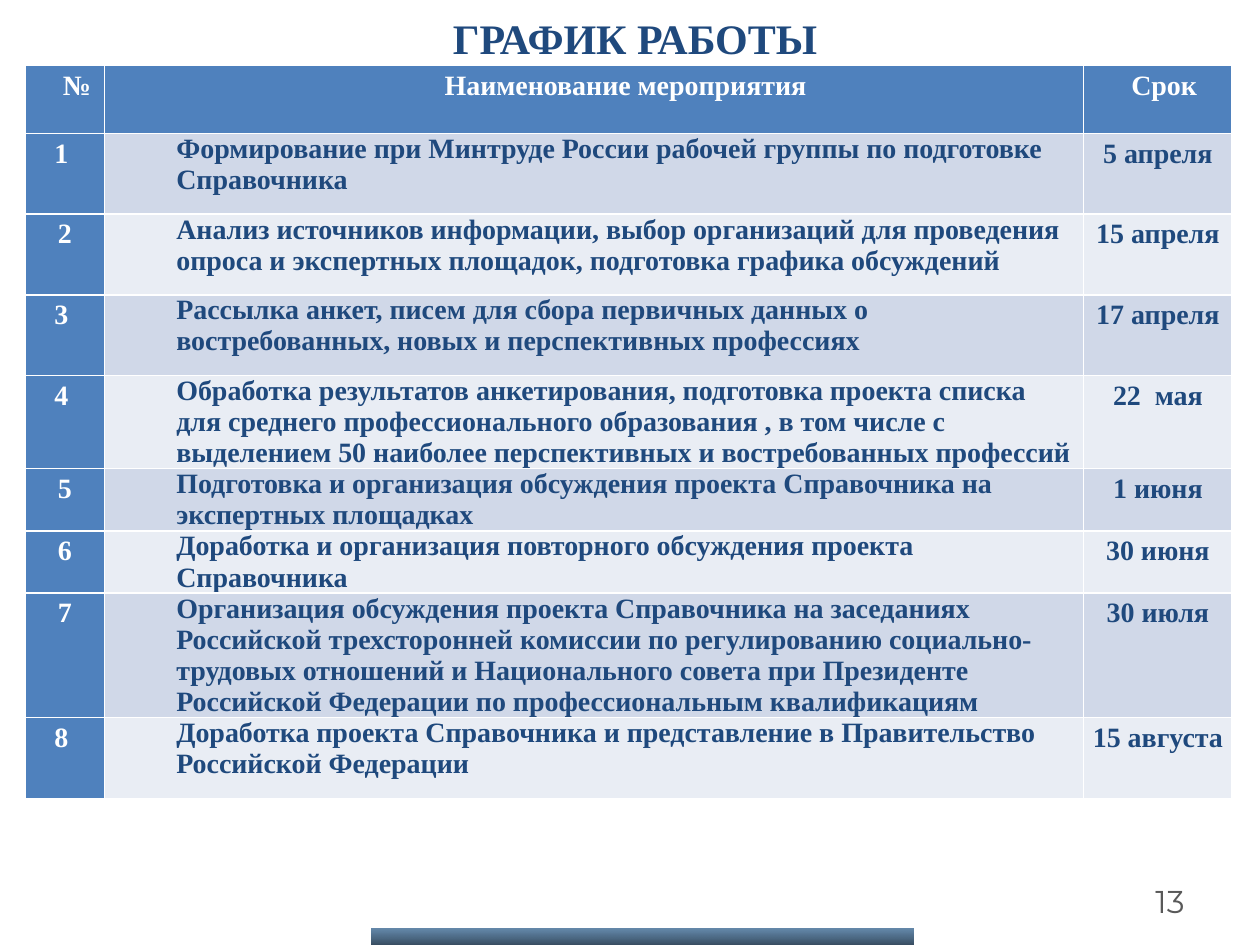
from dataclasses import dataclass

from pptx import Presentation
from pptx.dml.color import RGBColor as Rgb
from pptx.enum.shapes import MSO_SHAPE as Shape
from pptx.enum.text import MSO_ANCHOR as Anchor, PP_ALIGN as Align
from pptx.oxml.ns import qn
from pptx.util import Inches, Pt
from lxml.etree import SubElement


@dataclass(frozen=True)
class Theme:
    serif: str = "Times New Roman"
    sans: str = "Montserrat"
    navy: str = "1F497D"
    blue: str = "4F81BD"
    white: str = "FFFFFF"
    gray: str = "595959"
    bands: tuple = ("D0D8E8", "E9EDF4")
    bar: tuple = (("003C73", 60), ("001C35", 80))  # colour, opacity in percent
    title: int = 24
    body: int = 16
    page: int = 18


HEAD = ("№", "Наименование мероприятия", "Срок")
HEAD_PADS = (0.19, 0.5, 0.1)
COLS = (0.63, 7.77, 1.18)
ROWS = (0.54, 0.64, 0.64, 0.64, 0.34, 0.4, 0.36, 0.67, 0.64)
PLAN = (
    ("1 ", "Формирование при Минтруде России рабочей группы по подготовке Справочника",
     "5 апреля"),
    ("2", "Анализ источников информации, выбор организаций для проведения опроса "
     "и экспертных площадок, подготовка графика обсуждений", "15 апреля"),
    ("3 ", "Рассылка анкет, писем для сбора первичных данных о востребованных, "
     "новых и перспективных профессиях", "17 апреля"),
    ("4 ", "Обработка результатов анкетирования, подготовка проекта списка для "
     "среднего профессионального образования , в том числе с выделением 50 "
     "наиболее перспективных и востребованных профессий", "22  мая"),
    ("5", "Подготовка и организация обсуждения проекта Справочника на экспертных "
     "площадках", "1 июня"),
    ("6", "Доработка и организация повторного обсуждения проекта Справочника",
     "30 июня"),
    ("7", "Организация обсуждения проекта Справочника на заседаниях Российской "
     "трехсторонней комиссии по регулированию социально-трудовых отношений и "
     "Национального совета при Президенте Российской Федерации по "
     "профессиональным квалификациям", "30 июля"),
    ("8 ", "Доработка проекта Справочника и представление в Правительство "
     "Российской Федерации", "15 августа"),
)


class Deck:
    def __init__(self, theme):
        self.theme = theme
        self.file = Presentation()
        self.file.slide_width, self.file.slide_height = Inches(10), Inches(7.5)
        self.slide = self.file.slides.add_slide(self.file.slide_layouts[6])

    def put(self, para, text, size, color, font, bold=True, align=Align.CENTER):
        para.alignment = align
        run = para.add_run()
        run.text = text
        run.font.name, run.font.size, run.font.bold = font, Pt(size), bold
        run.font.color.rgb = Rgb.from_string(color)

    def text(self, box, text, size, color, font, anchor=Anchor.TOP, **look):
        frame = self.slide.shapes.add_textbox(*map(Inches, box)).text_frame
        frame.word_wrap = True
        frame.vertical_anchor = anchor
        self.put(frame.paragraphs[0], text, size, color, font, **look)

    def cell(self, cell, text, fill, color, pad=0, hang=0, loose=True):
        cell.fill.solid()
        cell.fill.fore_color.rgb = Rgb.from_string(fill)
        cell.margin_left = cell.margin_right = Inches(0.07)
        cell.margin_top = cell.margin_bottom = 0
        para = cell.text_frame.paragraphs[0]
        self.put(para, text, self.theme.body, color, self.theme.serif,
                 align=Align.CENTER if loose else Align.LEFT)
        if loose:
            para.line_spacing, para.space_before = 1.15, Pt(6)
        props = para._p.get_or_add_pPr()
        props.set("marL", str(Inches(pad)))
        props.set("indent", str(Inches(hang)))

    def table(self, left, top):
        look = self.theme
        grid = self.slide.shapes.add_table(
            len(ROWS), len(COLS), Inches(left), Inches(top),
            Inches(sum(COLS)), Inches(sum(ROWS))).table
        grid.first_col = True
        for col, width in zip(grid.columns, COLS):
            col.width = Inches(width)
        for row, height in zip(grid.rows, ROWS):
            row.height = Inches(height)
        for i, (text, pad) in enumerate(zip(HEAD, HEAD_PADS)):
            self.cell(grid.cell(0, i), text, look.blue, look.white, pad)
        for i, (num, task, date) in enumerate(PLAN):
            band = look.bands[i % 2]
            self.cell(grid.cell(i + 1, 0), num, look.blue, look.white, 0.38, -0.38)
            self.cell(grid.cell(i + 1, 1), task, band, look.navy, 0.5, loose=False)
            self.cell(grid.cell(i + 1, 2), date, band, look.navy)

    def bar(self, box):
        bar = self.slide.shapes.add_shape(Shape.RECTANGLE, *map(Inches, box))
        bar.shadow.inherit = False
        bar.line.fill.background()
        bar.fill.gradient()
        bar.fill.gradient_angle = 270
        for i, (stop, (color, _)) in enumerate(
                zip(bar.fill.gradient_stops, self.theme.bar)):
            stop.position = i
            stop.color.rgb = Rgb.from_string(color)
        tints = bar._element.spPr.iter(qn("a:srgbClr"))
        for tint, (_, alpha) in zip(list(tints), self.theme.bar):
            SubElement(tint, qn("a:alpha")).set("val", str(alpha * 1000))


def main():
    look = Theme()
    deck = Deck(look)
    # Schedule
    deck.table(0.2, 0.52)
    # Title
    deck.text((1.3, 0.05, 7.48, 0.5), "ГРАФИК РАБОТЫ", look.title, look.navy, look.serif)
    # Footer bar and page number
    deck.bar((2.95, 7.37, 4.3, 0.13))
    deck.text((7.17, 6.95, 2.33, 0.4), "13", look.page, look.gray, look.sans,
              bold=False, align=Align.RIGHT, anchor=Anchor.MIDDLE)
    deck.file.save("out.pptx")


if __name__ == "__main__":
    main()
